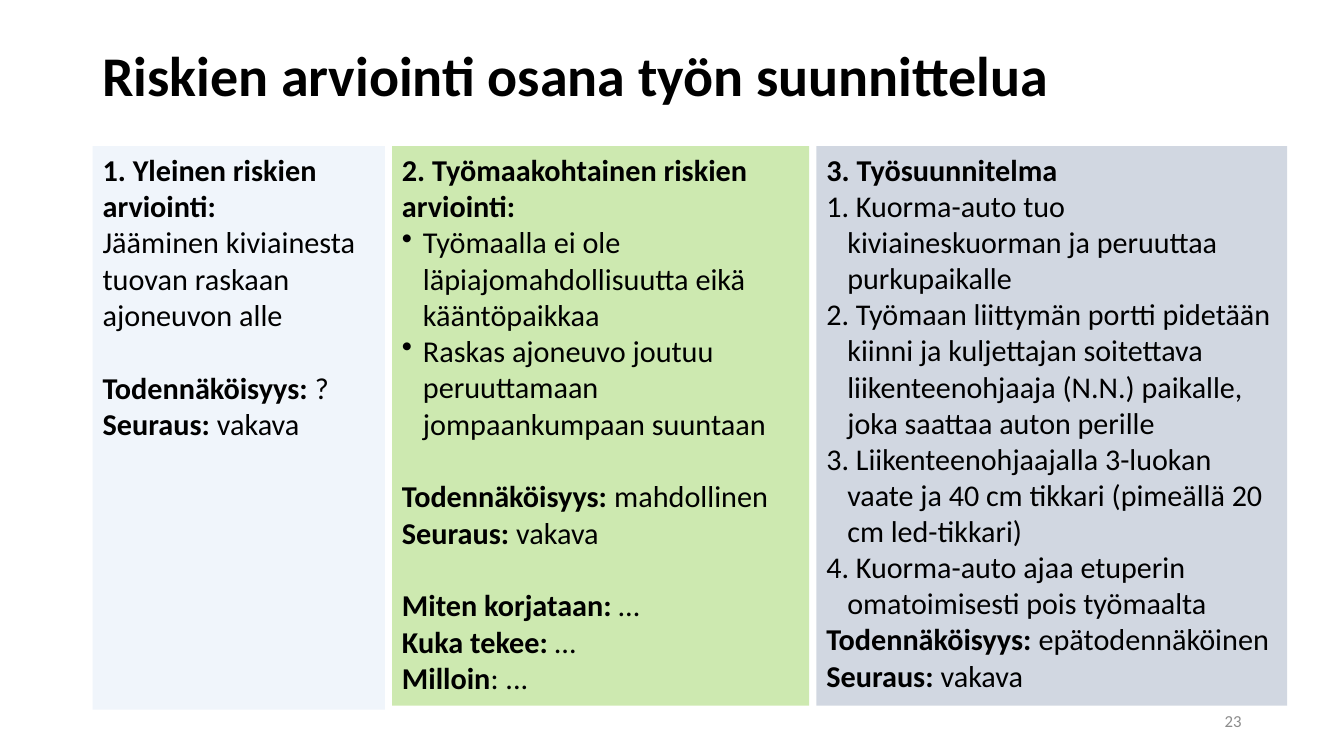
from lxml.etree import SubElement
from pptx import Presentation
from pptx.dml.color import RGBColor as RGB
from pptx.enum.shapes import MSO_SHAPE as Shape
from pptx.enum.text import MSO_ANCHOR as Anchor, PP_ALIGN as Align
from pptx.oxml.ns import qn
from pptx.util import Pt

HUES = {"ink": "000000", "page": "8C8C8C", "blue": "DEEBF7",
        "green": "92D050", "slate": "99A8BD"}
BODY, STEP = 21.6, 21.5
LINE = 26  # height of one skipped line
HANG = 15
TOP = 104.4


def write(para, text, size=BODY, bold=False, hue="ink"):
    run = para.add_run()
    run.text = text
    font = run.font
    font.name, font.size, font.bold = "Calibri", Pt(size), bold
    font.color.rgb = RGB.from_string(HUES[hue])


def mark(para, kind, **attrs):
    """Give the paragraph a hanging bullet or number."""
    props = para._p.get_or_add_pPr()
    props.set("marL", str(Pt(HANG)))
    props.set("indent", str(-Pt(HANG)))
    SubElement(props, qn("a:" + kind), attrs)


def label(box, text, anchor=Anchor.MIDDLE, align=Align.LEFT, **form):
    """Place a single line of text in a box without fill."""
    frame = box_frame(slide.shapes.add_textbox(*map(Pt, box)), anchor)
    para = frame.paragraphs[0]
    para.alignment = align
    write(para, text, **form)
    return para


def box_frame(shape, anchor):
    frame = shape.text_frame
    frame.word_wrap = True
    frame.vertical_anchor = anchor
    return frame


def panel(box, hue, head, rows):
    """Draw a tinted column; each row is (kind, bold part, plain part)."""
    rect = slide.shapes.add_shape(Shape.RECTANGLE, *map(Pt, box))
    rect.shadow.inherit = False
    rect.line.fill.background()
    rect.fill.solid()
    rect.fill.fore_color.rgb = RGB.from_string(HUES[hue])
    tint = rect.fill._xPr.find(".//" + qn("a:srgbClr"))
    SubElement(tint, qn("a:alpha"), val="45000")

    frame = box_frame(rect, Anchor.TOP)
    para = frame.paragraphs[0]
    para.alignment = Align.LEFT
    write(para, head, bold=True)
    for kind, strong, plain in rows:
        para = frame.add_paragraph()
        para.alignment = Align.LEFT
        if kind == "gap":
            para.space_before = Pt(LINE)
        elif kind == "dot":
            mark(para, "buChar", char="•")
        elif kind == "step":
            mark(para, "buAutoNum", type="arabicPeriod")
        if strong:
            write(para, strong, bold=True)
        write(para, plain, size=STEP if kind == "step" else BODY)


def rating(chance, kind="gap"):
    return [(kind, "Todennäköisyys: ", chance), ("", "Seuraus: ", "vakava")]


general = [("", "", "Jääminen kiviainesta tuovan raskaan ajoneuvon alle"),
           *rating("?")]
site = [
    ("dot", "", "Työmaalla ei ole läpiajomahdollisuutta eikä kääntöpaikkaa"),
    ("dot", "", "Raskas ajoneuvo joutuu peruuttamaan jompaankumpaan suuntaan"),
    *rating("mahdollinen"),
    ("gap", "Miten korjataan:", " …"),
    ("", "Kuka tekee:", " …"),
    ("", "Milloin", ": ..."),
]
steps = [
    "Kuorma-auto tuo kiviaineskuorman ja peruuttaa purkupaikalle",
    "Työmaan liittymän portti pidetään kiinni ja kuljettajan soitettava "
    "liikenteenohjaaja (N.N.) paikalle, joka saattaa auton perille",
    "Liikenteenohjaajalla 3-luokan vaate ja 40 cm tikkari "
    "(pimeällä 20 cm led-tikkari)",
    "Kuorma-auto ajaa etuperin omatoimisesti pois työmaalta",
]
plan = [("step", "", " " + step) for step in steps]
plan += rating("epätodennäköinen", kind="")

deck = Presentation()
deck.slide_width, deck.slide_height = Pt(960), Pt(540)
slide = deck.slides.add_slide(deck.slide_layouts[6])

title = label((66, 3.6, 828, 104.4), "Riskien arviointi osana työn suunnittelua",
              size=40, bold=True)
title.line_spacing = 0.9
label((678, 500.4, 216, 28.8), "23", align=Align.RIGHT, size=12, hue="page")
panel((66.24, TOP, 208.8, 402.5), "blue", "1. Yleinen riskien arviointi:", general)
panel((280, TOP, 298, 399.6), "green",
      "2. Työmaakohtainen riskien arviointi:", site)
panel((583.2, TOP, 336.24, 399.6), "slate", "3. Työsuunnitelma", plan)

deck.save("out.pptx")
